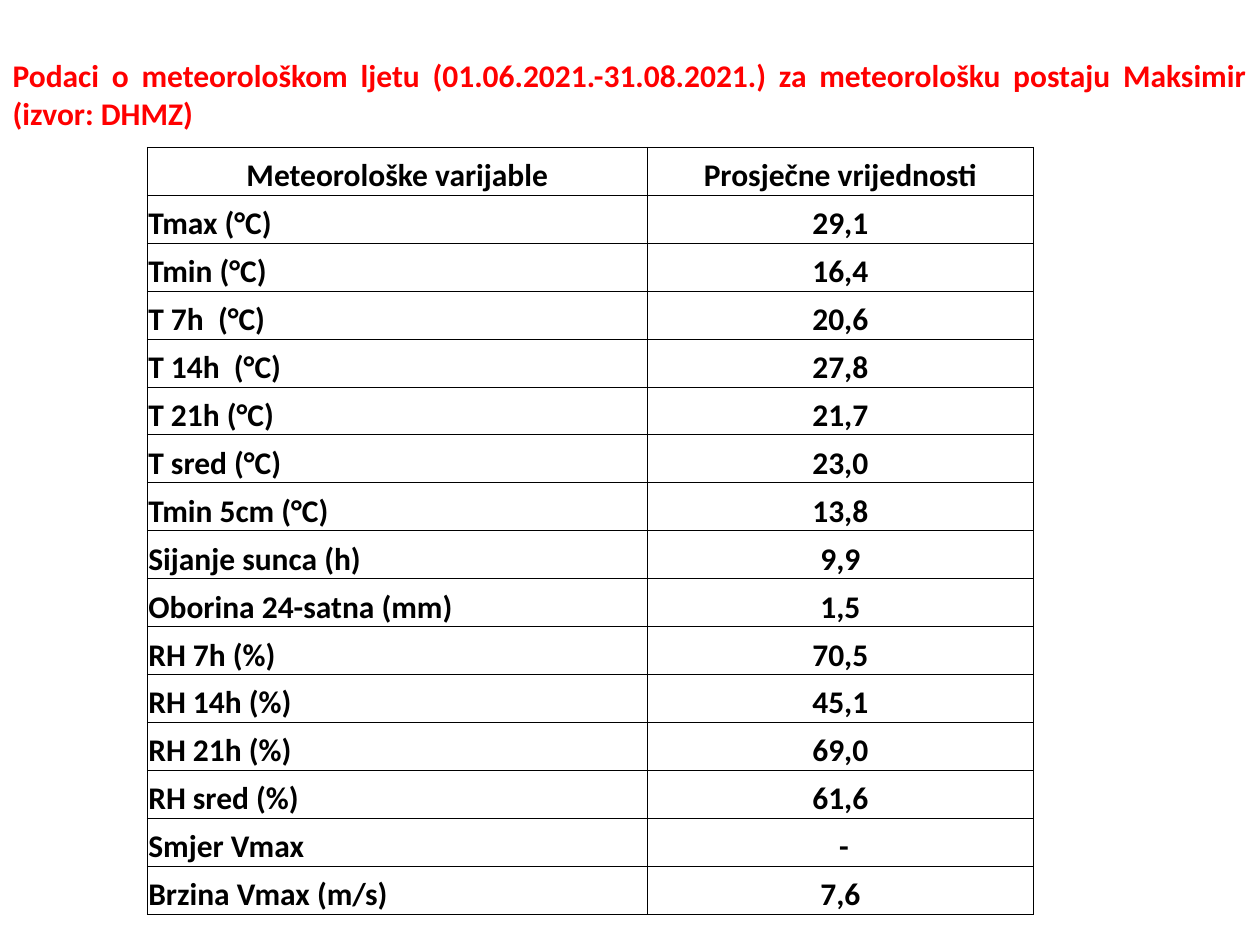
from lxml.etree import SubElement
from pptx import Presentation
from pptx.dml.color import RGBColor
from pptx.enum.text import MSO_ANCHOR, MSO_AUTO_SIZE, PP_ALIGN
from pptx.oxml.ns import qn
from pptx.util import Cm, Pt

COLORS = {"title": "FF0000", "text": "000000", "border": "000000"}
TITLE = ("Podaci o meteorološkom ljetu (01.06.2021.-31.08.2021.) "
         "za meteorološku postaju Maksimir (izvor: DHMZ)")
ROWS = [
    ("Meteorološke varijable", "Prosječne vrijednosti"),
    ("Tmax (°C)", "29,1"),
    ("Tmin (°C)", "16,4"),
    ("T 7h  (°C)", "20,6"),
    ("T 14h  (°C)", "27,8"),
    ("T 21h (°C)", "21,7"),
    ("T sred (°C)", "23,0"),
    ("Tmin 5cm (°C)", "13,8"),
    ("Sijanje sunca (h)", "9,9"),
    ("Oborina 24-satna (mm)", "1,5"),
    ("RH 7h (%)", "70,5"),
    ("RH 14h (%)", "45,1"),
    ("RH 21h (%)", "69,0"),
    ("RH sred (%)", "61,6"),
    ("Smjer Vmax", " -"),
    ("Brzina Vmax (m/s)", "7,6"),
]


def format_paragraph(p, color, align):
    p.alignment = align
    p.font.name = "Calibri"
    p.font.size = Pt(18)
    p.font.bold = True
    p.font.color.rgb = RGBColor.from_string(COLORS[color])


def add_borders(cell):
    tc_pr = cell._tc.get_or_add_tcPr()
    for side in ("lnL", "lnR", "lnT", "lnB"):
        ln = SubElement(tc_pr, qn(f"a:{side}"), w=str(Pt(0.5)))
        fill = SubElement(ln, qn("a:solidFill"))
        SubElement(fill, qn("a:srgbClr"), val=COLORS["border"])


def place_title(slide, left, top, width, height):
    sp = slide.shapes.title
    sp.left, sp.top, sp.width, sp.height = left, top, width, height
    tf = sp.text_frame
    tf.text = TITLE
    tf.word_wrap = True
    tf.auto_size = MSO_AUTO_SIZE.SHAPE_TO_FIT_TEXT
    tf.vertical_anchor = MSO_ANCHOR.TOP
    format_paragraph(tf.paragraphs[0], "title", PP_ALIGN.JUSTIFY)


def fill_cell(cell, text, align):
    cell.text = text
    cell.vertical_anchor = MSO_ANCHOR.BOTTOM
    cell.margin_left = cell.margin_right = cell.margin_top = Cm(0.02)
    cell.margin_bottom = 0
    add_borders(cell)
    cell.fill.background()
    format_paragraph(cell.text_frame.paragraphs[0], "text", align)


def add_weather_table(slide, left, top, width, height):
    table = slide.shapes.add_table(len(ROWS), 2, left, top, width, height).table
    table.first_row = table.horz_banding = False
    table.columns[0].width = Cm(10.08)
    table.columns[1].width = width - Cm(10.08)
    for i, row in enumerate(ROWS):
        for j, text in enumerate(row):
            align = PP_ALIGN.LEFT if i and j == 0 else PP_ALIGN.CENTER
            fill_cell(table.cell(i, j), text, align)


def main():
    prs = Presentation()
    prs.slide_width, prs.slide_height = Cm(25.4), Cm(19.05)
    slide = prs.slides.add_slide(prs.slide_layouts[5])
    place_title(slide, 0, Cm(1), prs.slide_width, Cm(1.8))
    add_weather_table(slide, Cm(2.97), Cm(2.97), Cm(17.86), Cm(15.47))
    prs.save("out.pptx")


if __name__ == "__main__":
    main()
